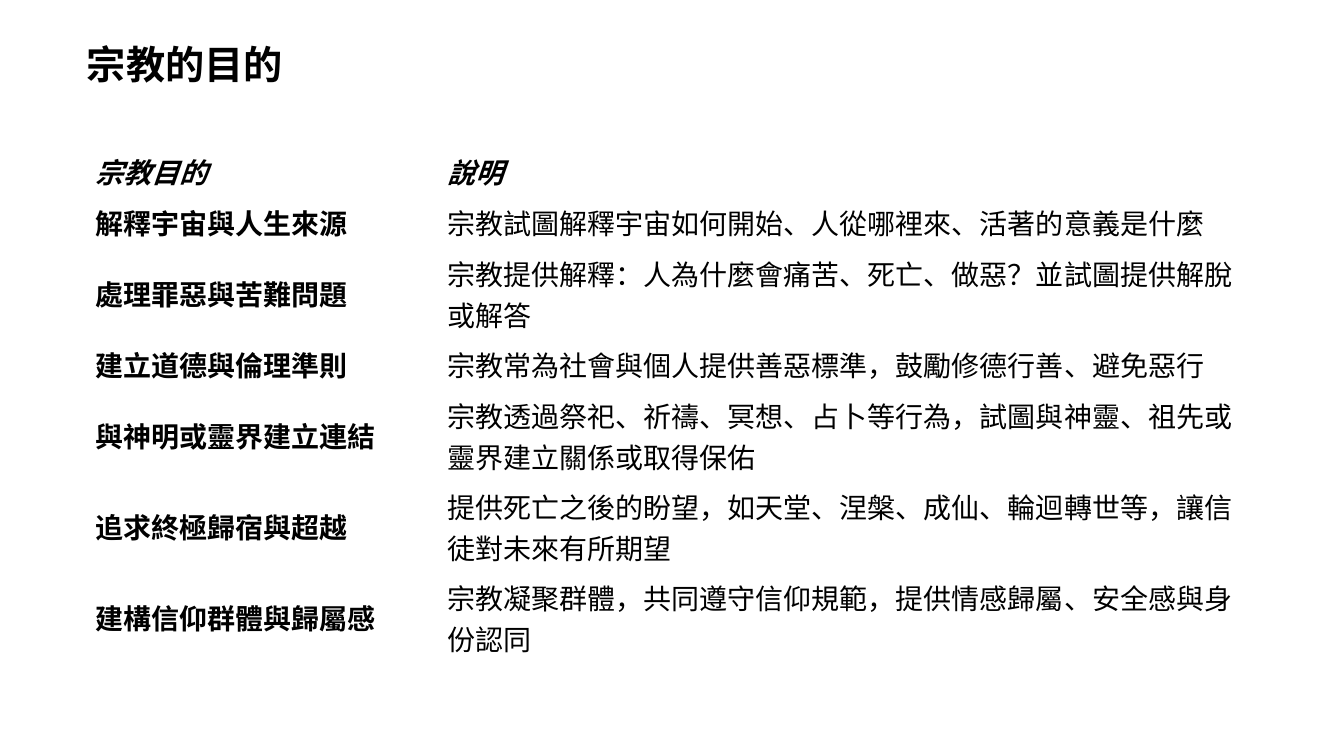
from pptx import Presentation
from pptx import util as u
from pptx.dml.color import RGBColor
from pptx.enum import text

# Content
TITLE = "宗教的目的"
HEADER = ("宗教目的", "說明")
PURPOSES = [
    ("解釋宇宙與人生來源", "宗教試圖解釋宇宙如何開始、人從哪裡來、活著的意義是什麼"),
    ("處理罪惡與苦難問題", "宗教提供解釋：人為什麼會痛苦、死亡、做惡？並試圖提供解脫或解答"),
    ("建立道德與倫理準則", "宗教常為社會與個人提供善惡標準，鼓勵修德行善、避免惡行"),
    ("與神明或靈界建立連結", "宗教透過祭祀、祈禱、冥想、占卜等行為，試圖與神靈、祖先或靈界建立關係或取得保佑"),
    ("追求終極歸宿與超越", "提供死亡之後的盼望，如天堂、涅槃、成仙、輪迴轉世等，讓信徒對未來有所期望"),
    ("建構信仰群體與歸屬感", "宗教凝聚群體，共同遵守信仰規範，提供情感歸屬、安全感與身份認同"),
]

# Layout in px
SLIDE = (1344, 756)
TITLE_BOX = (77, 27, 1159, 80)
TABLE_LEFT, TABLE_TOP = 85, 146
COLUMNS = (352, 807)
LINE_HEIGHT, ROW_PADDING = 40, 11
CHARACTERS_PER_LINE = 28
BLACK = "000000"


def px(length):
    return u.Emu(round(length * 914400 / 100.8))


def color(value):
    return RGBColor.from_string(value)


def write(frame, words, size, **formats):
    frame.word_wrap = True
    run = frame.paragraphs[0].add_run()
    run.text = words
    run.font.color.rgb = color(BLACK)
    for name, value in {"name": "Calibri", "size": u.Pt(size), **formats}.items():
        setattr(run.font, name, value)


presentation = Presentation()
presentation.slide_width, presentation.slide_height = map(px, SLIDE)
slide = presentation.slides.add_slide(presentation.slide_layouts[6])

# Title
title = slide.shapes.add_textbox(*map(px, TITLE_BOX)).text_frame
title.vertical_anchor = text.MSO_ANCHOR.MIDDLE
write(title, TITLE, 28, bold=True)
title.paragraphs[0].line_spacing = 0.9

# Table: row height follows the number of lines in the description
rows = [HEADER, *PURPOSES]
heights = [ROW_PADDING + LINE_HEIGHT * -(-len(row[1]) // CHARACTERS_PER_LINE)
           for row in rows]
table = slide.shapes.add_table(
    len(rows), len(COLUMNS), px(TABLE_LEFT), px(TABLE_TOP),
    px(sum(COLUMNS)), px(sum(heights))).table
table.first_row = table.horz_banding = False
for column, width in zip(table.columns, COLUMNS):
    column.width = px(width)

for i, (row, height) in enumerate(zip(rows, heights)):
    table.rows[i].height = px(height)
    for j, words in enumerate(row):
        cell = table.cell(i, j)
        cell.fill.background()
        cell.vertical_anchor = text.MSO_ANCHOR.MIDDLE
        write(cell.text_frame, words, 20, bold=i == 0 or j == 0, italic=i == 0)

presentation.save("out.pptx")
